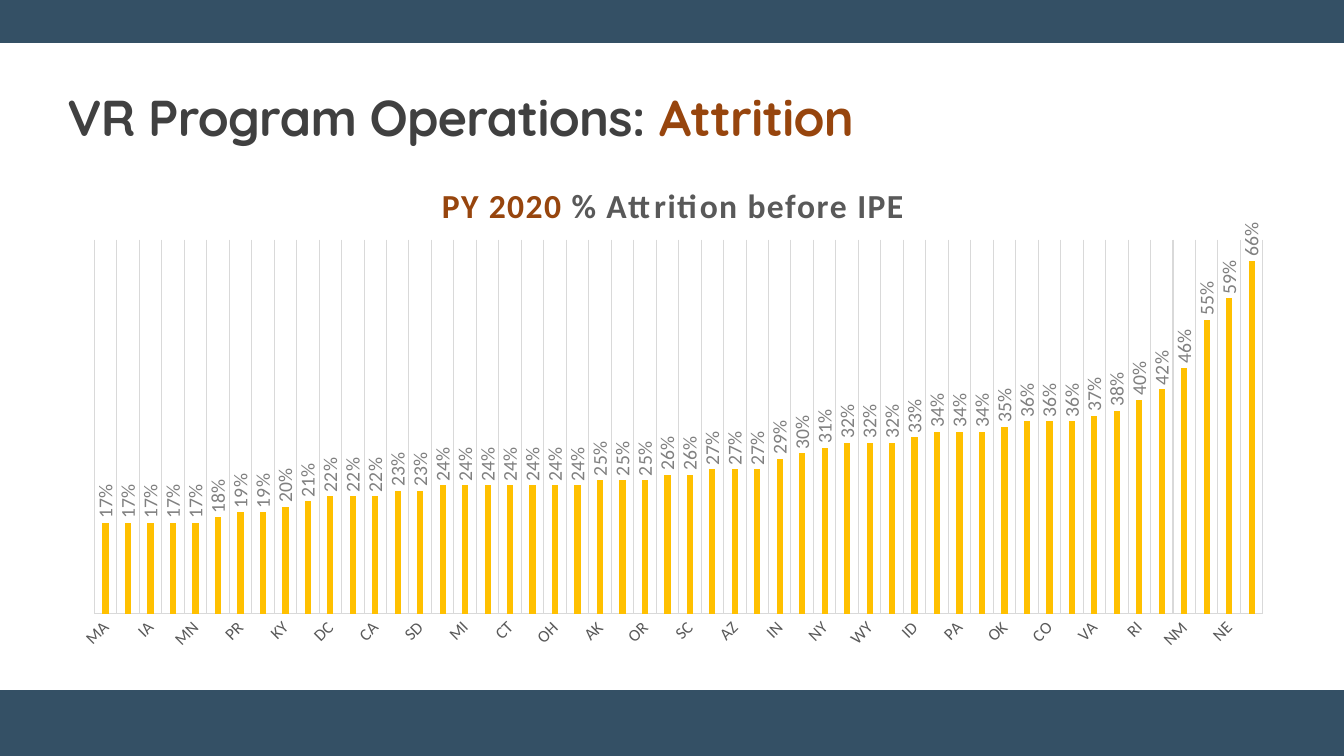
from lxml import etree
from pptx import Presentation
from pptx.chart.data import CategoryChartData
from pptx.dml.color import RGBColor
from pptx.enum.chart import XL_CHART_TYPE as ChartType
from pptx.enum.chart import XL_LABEL_POSITION as LabelPosition
from pptx.enum.chart import XL_TICK_LABEL_POSITION as TickLabels
from pptx.enum.chart import XL_TICK_MARK as TickMark
from pptx.enum.shapes import MSO_SHAPE as Shape
from pptx.enum.text import MSO_ANCHOR as Anchor
from pptx.oxml.ns import qn
from pptx.util import Inches, Pt

NAVY, RUST, GOLD = "345065", "97450D", "FFC000"
DARK, GRAY, LABEL_GRAY, RULE = "404040", "595959", "808080", "D9D9D9"

STATES = """MA IL IA AR MN DE PR AL KY TX DC WV CA VT SD WI MI MS CT TN OH GA AK FL OR MO
SC ND AZ KS IN ME NY MD WY NV ID NH PA LA OK UT CO NC VA NJ RI HI NM WA NE MT""".split()
PERCENTS = [
    17, 17, 17, 17, 17, 18, 19, 19, 20, 21, 22, 22, 22, 23, 23, 24, 24, 24,
    24, 24, 24, 24, 25, 25, 25, 26, 26, 27, 27, 27, 29, 30, 31, 32, 32, 32,
    33, 34, 34, 34, 35, 36, 36, 36, 37, 38, 40, 42, 46, 55, 59, 66,
]


def color(hex_code):
    return RGBColor.from_string(hex_code)


def style_font(font, size, hex_code, name="Calibri", bold=False):
    font.size, font.bold, font.name = Pt(size), bold, name
    font.color.rgb = color(hex_code)


def add_span(para, text, spacing=0, **style):
    """Add one formatted piece of text; spacing is in points."""
    span = para.add_run()
    span.text = text
    style_font(span.font, **style)
    span.font._element.set("spc", str(round(spacing * 100)))


def add_band(page, top, height):
    band = page.shapes.add_shape(
        Shape.RECTANGLE, 0, Inches(top), Inches(13.33), Inches(height))
    band.shadow.inherit = False
    band.fill.solid()
    band.fill.fore_color.rgb = color(NAVY)
    band.line.color.rgb = color(NAVY)
    band.line.width = Pt(1)


def add_heading(page):
    box = page.shapes.add_textbox(Inches(0.57), Inches(0.87), Inches(12.2), Inches(0.7))
    frame = box.text_frame
    frame.word_wrap = True
    frame.vertical_anchor = Anchor.TOP
    para = frame.paragraphs[0]
    para.line_spacing = 0.9
    style = dict(size=36, name="Quicksand", bold=True, spacing=-0.5)
    add_span(para, "VR Program Operations: ", hex_code=DARK, **style)
    add_span(para, "Attrition", hex_code=RUST, **style)


def place(parent, index, **fractions):
    """Give a chart part a fixed place, in fractions of the chart."""
    for old in parent.findall(qn("c:layout")):
        parent.remove(old)
    layout = etree.Element(qn("c:layout"))
    manual = etree.SubElement(layout, qn("c:manualLayout"))
    if "w" in fractions:
        etree.SubElement(manual, qn("c:layoutTarget")).set("val", "inner")
    for mode in ("xMode", "yMode"):
        etree.SubElement(manual, qn(f"c:{mode}")).set("val", "edge")
    for key, value in fractions.items():
        etree.SubElement(manual, qn(f"c:{key}")).set("val", str(value))
    parent.insert(index, layout)


def rotate(text_holder, degrees):
    body = text_holder._element.find(qn("c:txPr")).find(qn("a:bodyPr"))
    body.set("rot", str(degrees * 60000))
    body.set("vert", "horz")


def style_axes(chart):
    states = chart.category_axis
    states.major_tick_mark = states.minor_tick_mark = TickMark.NONE
    states.has_major_gridlines = True
    for line in (states.format.line, states.major_gridlines.format.line):
        line.color.rgb = color(RULE)
        line.width = Pt(0.75)
    style_font(states.tick_labels.font, 12, GRAY)
    rotate(states, -45)

    rates = chart.value_axis
    rates.minimum_scale, rates.maximum_scale = 0, 0.7
    rates.has_major_gridlines = False
    rates.tick_label_position = TickLabels.NONE
    rates.visible = False


def style_columns(plot):
    plot.gap_width, plot.overlap = 261, -90
    plot.vary_by_categories = False
    series = plot.series[0]
    series.invert_if_negative = False
    series.format.fill.solid()
    series.format.fill.fore_color.rgb = color(GOLD)
    labels = series.data_labels
    labels.show_value = True
    labels.position = LabelPosition.OUTSIDE_END
    labels.number_format, labels.number_format_is_linked = "0%", False
    style_font(labels.font, 14, LABEL_GRAY)
    rotate(labels, -90)


def add_attrition_chart(page):
    data = CategoryChartData(number_format="0%")
    data.categories = STATES
    data.add_series("Series 1", [percent / 100 for percent in PERCENTS])
    chart = page.shapes.add_chart(
        ChartType.COLUMN_CLUSTERED, Inches(0.57), Inches(1.61),
        Inches(12.2), Inches(4.95), data).chart
    style_font(chart.font, 10, "000000")
    chart.has_legend = False

    # Chart title
    chart.has_title = True
    para = chart.chart_title.text_frame.paragraphs[0]
    style = dict(size=24, bold=True, spacing=1)
    add_span(para, "PY 2020", hex_code=RUST, **style)
    add_span(para, " % Attrition before IPE", hex_code=GRAY, **style)
    place(chart.chart_title._element, 1, x=0.31, y=0.04)

    # Plot
    style_axes(chart)
    style_columns(chart.plots[0])
    plot_area = chart._chartSpace.chart.plotArea
    place(plot_area, 0, x=0.03, y=0.155, w=0.95, h=0.75)


def main():
    deck = Presentation()
    deck.slide_width, deck.slide_height = Inches(13.33), Inches(7.5)
    page = deck.slides.add_slide(deck.slide_layouts[6])
    add_band(page, top=6.85, height=0.65)
    add_band(page, top=0, height=0.42)
    add_heading(page)
    add_attrition_chart(page)
    deck.save("out.pptx")


if __name__ == "__main__":
    main()
